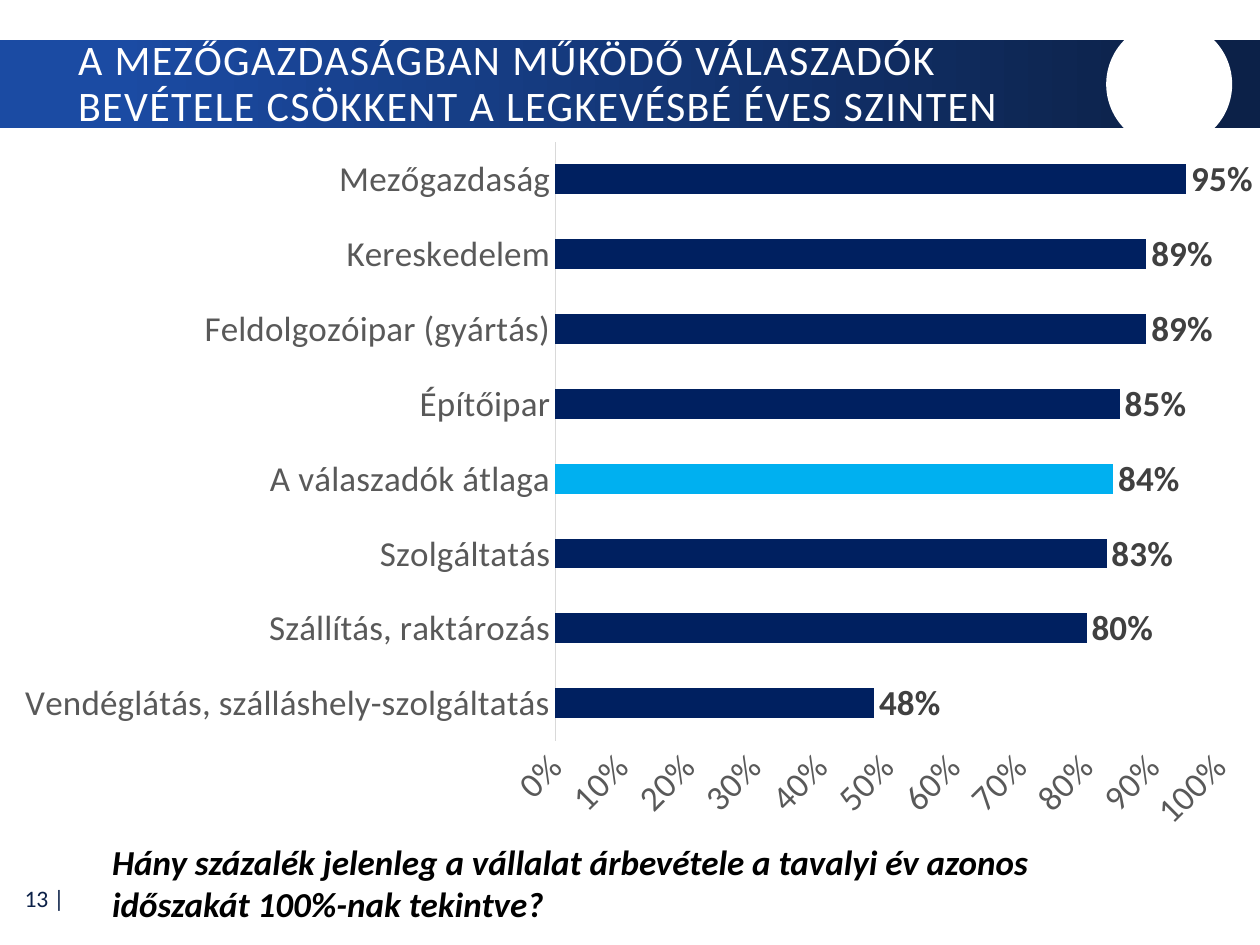
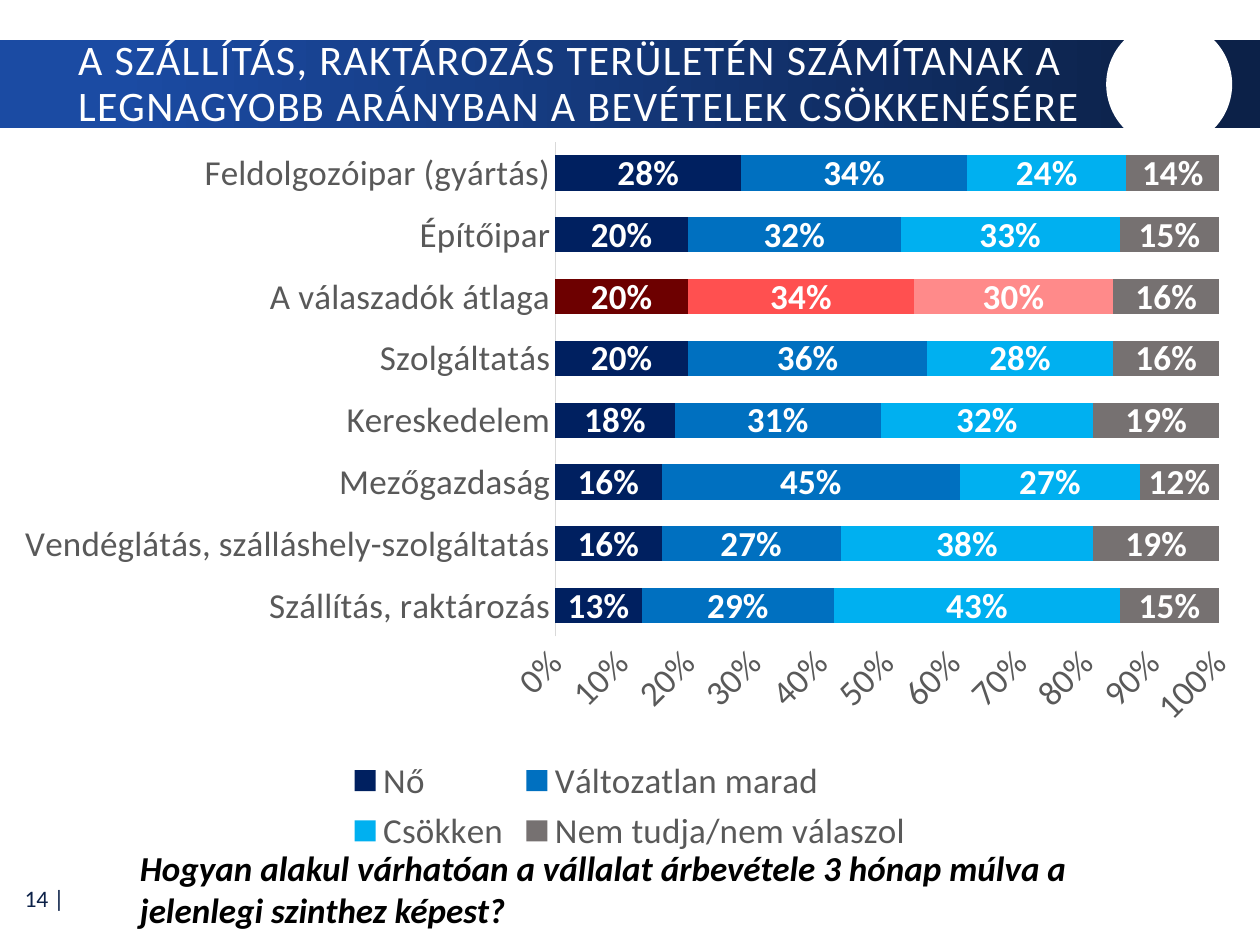
from pptx import Presentation
from pptx.chart.data import CategoryChartData
from pptx.dml.color import RGBColor
from pptx.enum.chart import XL_CHART_TYPE as ChartType
from pptx.enum.chart import XL_LABEL_POSITION as LabelPosition
from pptx.enum.chart import XL_LEGEND_POSITION as LegendPosition
from pptx.enum.chart import XL_TICK_MARK as TickMark
from pptx.enum.shapes import MSO_SHAPE as Shape
from pptx.enum.text import MSO_ANCHOR as Anchor
from pptx.enum.text import MSO_AUTO_SIZE as AutoSize
from pptx.enum.text import PP_ALIGN as Align
from pptx.util import Cm, Pt

FONT = "Calibri"
COLORS = {
    "band_start": "1B4BA3",
    "band_end": "0C2148",
    "white": "FFFFFF",
    "black": "000000",
    "axis_text": "595959",
    "axis_line": "D9D9D9",
    "dark_label": "404040",
    "navy": "002060",
    "blue": "0070C0",
    "sky": "00B0F0",
    "gray": "767171",
    "dark_red": "6D0000",
    "red": "FF5050",
    "pink": "FF8A8A",
}
TITLE_BOX = (1.32, 0.86, 21.13, 1.7)
BAND_BOX = (0, 0.81, 25.4, 1.78)
CIRCLE_BOX = (22.3, 0.43, 2.54, 2.54)
NUMBER_BOX = (0.03, 17.63, 1.52, 0.94)
AVERAGE = "A válaszadók átlaga"

REVENUE = {
    "type": ChartType.BAR_CLUSTERED,
    "box": (0, 2.57, 25.4, 14.5),
    "categories": [
        "Vendéglátás, szálláshely-szolgáltatás", "Szállítás, raktározás",
        "Szolgáltatás", AVERAGE, "Építőipar",
        "Feldolgozóipar (gyártás)", "Kereskedelem", "Mezőgazdaság",
    ],
    "series": [
        ("Series 1", [0.48, 0.8, 0.83, 0.84, 0.85, 0.89, 0.89, 0.95], "navy", "sky"),
    ],
    "gap": 150,
    "overlap": -50,
    "label_color": "dark_label",
    "label_position": LabelPosition.OUTSIDE_END,
    "legend": False,
}
OUTLOOK = {
    "type": ChartType.BAR_STACKED,
    "box": (0, 2.57, 25.4, 14.76),
    "categories": [
        "Szállítás, raktározás", "Vendéglátás, szálláshely-szolgáltatás",
        "Mezőgazdaság", "Kereskedelem", "Szolgáltatás", AVERAGE,
        "Építőipar", "Feldolgozóipar (gyártás)",
    ],
    "series": [
        ("Nő", [0.13, 0.16, 0.16, 0.18, 0.2, 0.2, 0.2, 0.28], "navy", "dark_red"),
        ("Változatlan marad", [0.29, 0.27, 0.45, 0.31, 0.36, 0.34, 0.32, 0.34], "blue", "red"),
        ("Csökken", [0.43, 0.38, 0.27, 0.32, 0.28, 0.3, 0.33, 0.24], "sky", "pink"),
        ("Nem tudja/nem válaszol", [0.15, 0.19, 0.12, 0.19, 0.16, 0.16, 0.15, 0.14], "gray", "gray"),
    ],
    "gap": 75,
    "overlap": 100,
    "label_color": "white",
    "label_position": LabelPosition.CENTER,
    "legend": True,
}


def color(name):
    return RGBColor.from_string(COLORS[name])


def lengths(box):
    return [Cm(value) for value in box]


def paint(fill, name):
    fill.solid()
    fill.fore_color.rgb = color(name)


def style_font(font, size, name, bold=False, italic=False):
    font.name = FONT
    font.size = Pt(size)
    font.color.rgb = color(name)
    font.bold = bold
    font.italic = italic


def add_text(page, box, text, size, name, **emphasis):
    frame = page.shapes.add_textbox(*lengths(box)).text_frame
    frame.word_wrap = True
    para = frame.paragraphs[0]
    para.text = text
    style_font(para.font, size, name, **emphasis)
    return frame


def add_header_shape(page, preset, box):
    shape = page.shapes.add_shape(preset, *lengths(box))
    shape.shadow.inherit = False
    shape.line.fill.background()
    page.shapes.title.element.addprevious(shape.element)
    return shape


def add_header(page, text):
    band = add_header_shape(page, Shape.RECTANGLE, BAND_BOX)
    band.fill.gradient()
    band.fill.gradient_angle = 0
    stops = [(0.09, "band_start"), (0.95, "band_end")]
    for stop, (position, name) in zip(band.fill.gradient_stops, stops):
        stop.position = position
        stop.color.rgb = color(name)
    circle = add_header_shape(page, Shape.OVAL, CIRCLE_BOX)
    paint(circle.fill, "white")

    title = page.shapes.title
    title.left, title.top, title.width, title.height = lengths(TITLE_BOX)
    frame = title.text_frame
    frame.word_wrap = True
    frame.auto_size = AutoSize.NONE
    frame.vertical_anchor = Anchor.MIDDLE
    para = frame.paragraphs[0]
    para.text = text
    para.alignment = Align.LEFT
    para.line_spacing = 0.9
    style_font(para.font, 24, "white")
    para.runs[0]._r.get_or_add_rPr().set("spc", "80")


def add_page_number(page, number):
    frame = add_text(page, NUMBER_BOX, f"{number} |", 13.5, "band_end")
    frame.vertical_anchor = Anchor.MIDDLE
    frame.paragraphs[0].alignment = Align.RIGHT


def style_axes(chart):
    for axis in (chart.category_axis, chart.value_axis):
        axis.major_tick_mark = axis.minor_tick_mark = TickMark.NONE
        axis.has_major_gridlines = False
        style_font(axis.tick_labels.font, 20, "axis_text")
    line = chart.category_axis.format.line
    line.color.rgb = color("axis_line")
    line.width = Pt(0.75)
    values = chart.value_axis
    values.minimum_scale, values.maximum_scale, values.major_unit = 0, 1, 0.1
    values.format.line.fill.background()
    values.tick_labels.number_format = "0%"
    values.tick_labels.number_format_is_linked = False
    values._element.txPr.bodyPr.set("rot", "-2700000")


def style_series(series, content, fill_name, average_name):
    series.invert_if_negative = False
    paint(series.format.fill, fill_name)
    if average_name != fill_name:
        average = series.points[content["categories"].index(AVERAGE)]
        paint(average.format.fill, average_name)
    labels = series.data_labels
    labels.show_value = True
    labels.number_format = "0%"
    labels.number_format_is_linked = False
    labels.position = content["label_position"]
    style_font(labels.font, 20, content["label_color"], bold=True)


def add_bar_chart(page, content):
    data = CategoryChartData(number_format="0%")
    data.categories = content["categories"]
    for name, values, *_ in content["series"]:
        data.add_series(name, values)
    chart = page.shapes.add_chart(content["type"], *lengths(content["box"]), data).chart
    style_font(chart.font, 10, "black")
    chart.has_title = False
    chart.has_legend = content["legend"]
    if chart.has_legend:
        chart.legend.position = LegendPosition.BOTTOM
        chart.legend.include_in_layout = False
        style_font(chart.legend.font, 20, "axis_text")
    plot = chart.plots[0]
    plot.vary_by_categories = False
    plot.gap_width = content["gap"]
    plot.overlap = content["overlap"]
    style_axes(chart)
    for series, (_, _, fill_name, average_name) in zip(plot.series, content["series"]):
        style_series(series, content, fill_name, average_name)


def add_chart_slide(deck, number, title, content, question, question_box):
    page = deck.slides.add_slide(deck.slide_layouts[5])
    add_header(page, title)
    add_page_number(page, number)
    add_bar_chart(page, content)
    add_text(page, question_box, question, 20, "black", bold=True, italic=True)


def main():
    deck = Presentation()
    deck.slide_width, deck.slide_height = Cm(25.4), Cm(19.05)
    add_chart_slide(
        deck, 13,
        "A MEZŐGAZDASÁGBAN MŰKÖDŐ VÁLASZADÓK BEVÉTELE CSÖKKENT A LEGKEVÉSBÉ ÉVES SZINTEN",
        REVENUE,
        "Hány százalék jelenleg a vállalat árbevétele a tavalyi év azonos időszakát 100%-nak tekintve?",
        (2.01, 16.81, 20.47, 1.96),
    )
    add_chart_slide(
        deck, 14,
        "A SZÁLLÍTÁS, RAKTÁROZÁS TERÜLETÉN SZÁMÍTANAK A LEGNAGYOBB ARÁNYBAN A BEVÉTELEK CSÖKKENÉSÉRE",
        OUTLOOK,
        "Hogyan alakul várhatóan a vállalat árbevétele 3 hónap múlva a jelenlegi szinthez képest?",
        (2.57, 16.94, 19.35, 1.96),
    )
    deck.save("out.pptx")


if __name__ == "__main__":
    main()
